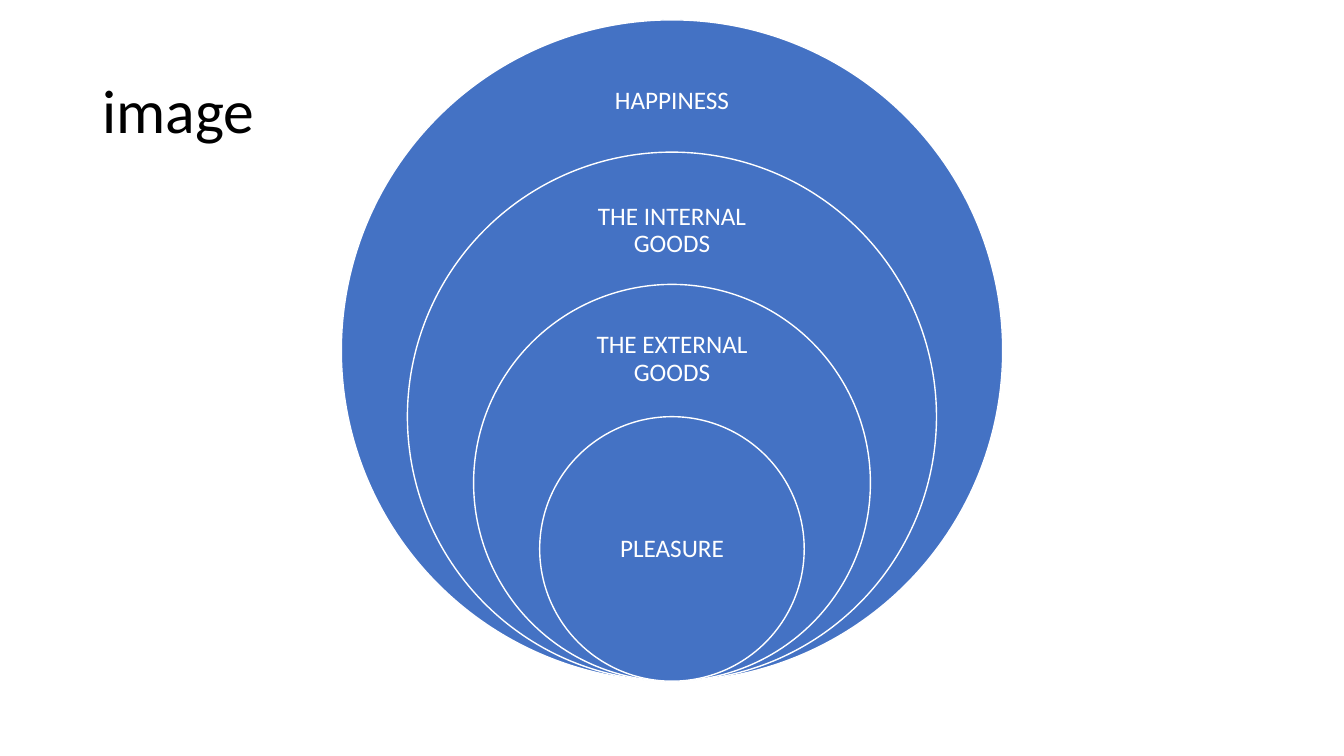
import dataclasses
import pptx
import pptx.dml.color
import pptx.enum.shapes
import pptx.enum.text
import pptx.util

Pt = pptx.util.Pt
Align = pptx.enum.text.PP_ALIGN


@dataclasses.dataclass(frozen=True)
class Theme:
    font: str = "Calibri"
    blue: str = "4472C4"
    white: str = "FFFFFF"
    black: str = "000000"
    title: float = 44
    label: float = 18


class Deck:
    def __init__(self, theme, wide, high):
        self.theme = theme
        self.show = pptx.Presentation()
        self.show.slide_width = Pt(wide)
        self.show.slide_height = Pt(high)
        self.slide = self.show.slides.add_slide(self.show.slide_layouts[6])

    def color(self, code):
        return pptx.dml.color.RGBColor.from_string(code)

    def text(self, words, box, size, color, align, inset):
        frame = self.slide.shapes.add_textbox(*map(Pt, box)).text_frame
        frame.word_wrap = True
        frame.vertical_anchor = pptx.enum.text.MSO_ANCHOR.MIDDLE
        frame.margin_left = frame.margin_right = Pt(inset[0])
        frame.margin_top = frame.margin_bottom = Pt(inset[1])
        para = frame.paragraphs[0]
        para.alignment = align
        para.line_spacing = 0.9
        run = para.add_run()
        run.text = words
        run.font.name = self.theme.font
        run.font.size = Pt(size)
        run.font.color.rgb = self.color(color)

    def title(self, words, box):
        self.text(words, box, self.theme.title, self.theme.black,
                  Align.LEFT, (7.2, 3.6))

    def label(self, words, box):
        self.text(words, box, self.theme.label, self.theme.white,
                  Align.CENTER, (10, 10))

    def circle(self, left, top, size):
        oval = self.slide.shapes.add_shape(
            pptx.enum.shapes.MSO_SHAPE.OVAL,
            Pt(left), Pt(top), Pt(size), Pt(size))
        oval.shadow.inherit = False
        oval.fill.solid()
        oval.fill.fore_color.rgb = self.color(self.theme.blue)
        oval.line.color.rgb = self.color(self.theme.white)
        oval.line.width = Pt(1)


def main():
    wide = 960
    mid = wide / 2
    base = 486.6
    full = 472.4
    rings = [
        ("HAPPINESS", 37.4, 132, 70.6),
        ("THE INTERNAL GOODS", 131, 132, 67.7),
        ("THE EXTERNAL GOODS", 224.6, 132, 64.1),
        ("PLEASURE", 344.9, 133.2, 94.3),
    ]
    deck = Deck(Theme(), wide, 540)
    deck.title("image", (66, 28.8, 828, 104.4))
    for step, (words, top, width, height) in enumerate(rings):
        size = full * (1 - step / 5)
        deck.circle(mid - size / 2, base - size, size)
        deck.label(words, (mid - width / 2, top, width, height))
    deck.show.save("out.pptx")


if __name__ == "__main__":
    main()
